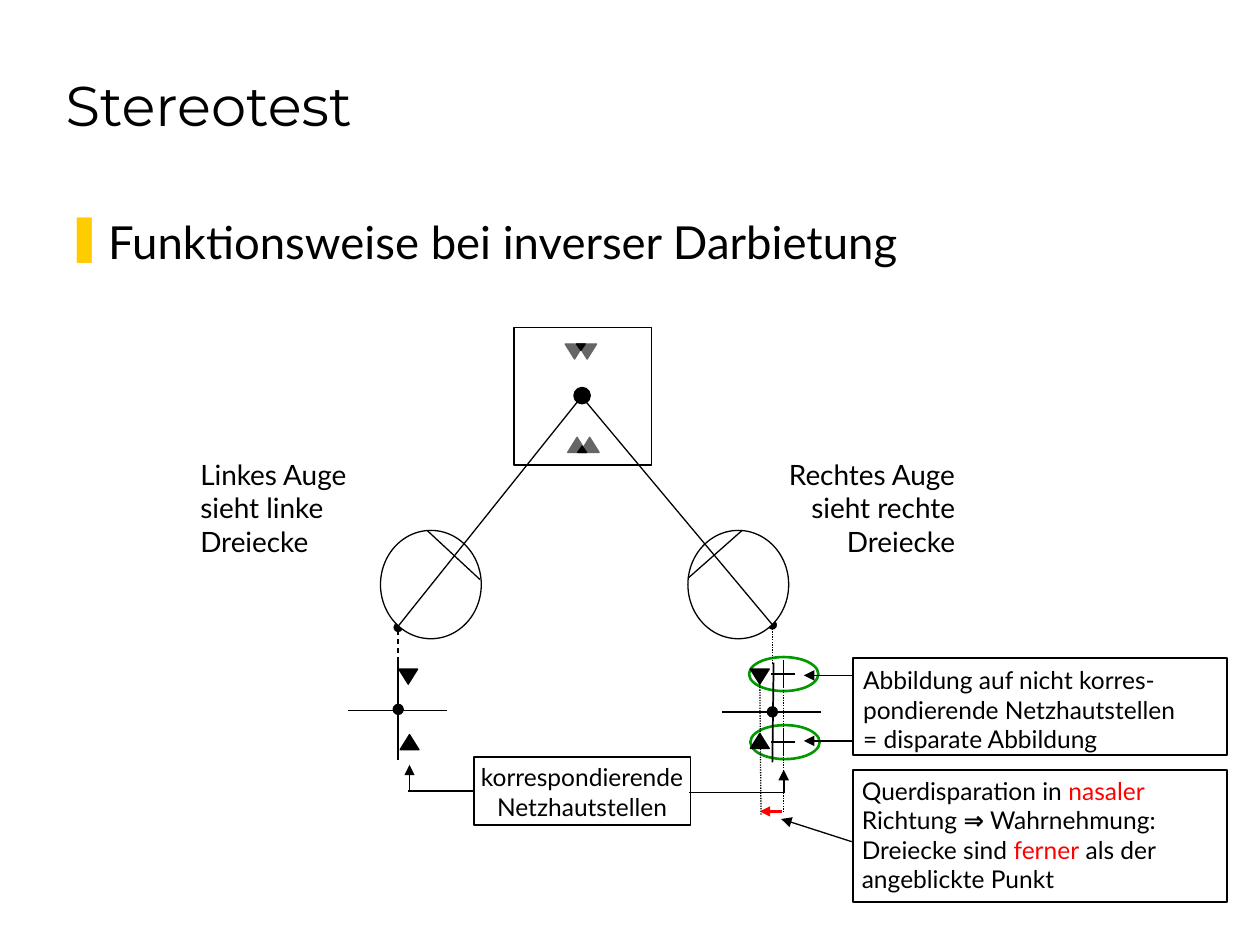
from copy import deepcopy

from lxml.etree import SubElement
from pptx import Presentation
from pptx.dml.color import RGBColor
from pptx.enum.dml import MSO_LINE as Dash
from pptx.enum.shapes import MSO_CONNECTOR, MSO_SHAPE as Shape
from pptx.enum.text import MSO_ANCHOR as Anchor, PP_ALIGN as Align
from pptx.oxml.ns import qn
from pptx.util import Inches, Pt

BLACK, GRAY, WHITE, RED, GREEN, YELLOW = (
    "000000", "666666", "FFFFFF", "FF0000", "009900", "FFCC00")
TITLE = "Stereotest"
HEADING = "Funktionsweise bei inverser Darbietung"

# box, insets (left, top, right), size, alignment, outlined, runs
TEXTS = [
    ((6.77, 5.22, 2.97, 0.77), (0.08, 0.06, 0.06), 14, Align.LEFT, True,
     [("Abbildung auf nicht korres-pondierende Netzhautstellen\n"
       "= disparate Abbildung", {})]),
    ((6.77, 6.11, 2.97, 1.05), (0.07, 0.05, 0.06), 14, Align.LEFT, True,
     [("Querdisparation in ", {}), ("nasaler", {"color": RED}),
      (" Richtung ", {}), ("⇒", {"bold": True}),
      (" Wahrnehmung: Dreiecke sind", {}), (" ferner", {"color": RED}),
      (" als der angeblickte Punkt", {})]),
    ((3.76, 6.01, 1.72, 0.54), (0.04, 0.04, 0.04), 14, Align.CENTER, True,
     [("korrespondierende\nNetzhautstellen", {})]),
    ((1.58, 3.62, 1.33, 0.92), (0.01, 0.01, 0.01), 16, Align.LEFT, False,
     [("Linkes Auge sieht linke Dreiecke", {})]),
    ((6.17, 3.62, 1.42, 0.92), (0.01, 0.01, 0.01), 16, Align.RIGHT, False,
     [("Rechtes Auge sieht rechte Dreiecke", {})]),
]

# centre x, centre y, width, height, fill, line colour, line width
EYES = [(x, 4.64, 0.8, 0.86, WHITE, BLACK, 0.75) for x in (3.42, 5.86)]
FOVEAS = [(x, y, 0.07, 0.07, BLACK, BLACK, 0.25)
          for x, y in ((3.16, 4.98), (6.13, 4.96))]
FIXATION_POINTS = [(x, y, size, size, BLACK, BLACK, 0.75) for x, y, size in
                   ((4.62, 3.14, 0.13), (3.16, 5.63, 0.08), (6.13, 5.65, 0.08))]
DISPARITY_RINGS = [(x, y, 0.55, 0.27, None, GREEN, 1.5)
                   for x, y in ((6.22, 5.35), (6.23, 5.89))]

# centre x, base y, width, signed height (positive points down), colour
TRIANGLES = [
    (4.56, 2.73, 0.15, 0.12, GRAY), (4.66, 2.73, 0.15, 0.12, GRAY),
    (4.61, 2.73, 0.07, 0.05, BLACK),
    (4.58, 3.59, 0.15, -0.12, GRAY), (4.68, 3.59, 0.15, -0.12, GRAY),
    (4.62, 3.59, 0.07, -0.05, BLACK),
    (3.24, 5.31, 0.15, 0.12, BLACK), (3.25, 5.95, 0.15, -0.12, BLACK),
    (6.03, 5.31, 0.15, 0.12, BLACK), (6.03, 5.94, 0.15, -0.12, BLACK),
]

# format, then (from x, from y, to x, to y) for each line
LINES = [
    ({"width": 0.75}, [
        (3.16, 4.97, 4.63, 3.13), (6.14, 4.97, 4.61, 3.14),
        (3.39, 4.21, 3.81, 4.6), (5.89, 4.21, 5.46, 4.59),
        (6.22, 5.24, 6.22, 5.46), (6.31, 5.35, 6.12, 5.35),
        (6.22, 5.79, 6.22, 6), (6.31, 5.89, 6.12, 5.89)]),
    ({"width": 1}, [
        (3.16, 6.03, 3.16, 5.24), (2.76, 5.64, 3.55, 5.64),
        (6.14, 5.26, 6.13, 6.05), (6.52, 5.65, 5.73, 5.65),
        (3.75, 6.28, 3.24, 6.28), (5.47, 6.29, 6.22, 6.29)]),
    ({"width": 0.75, "dash": Dash.DASH}, [(3.16, 5, 3.16, 5.29)]),
    ({"width": 0.75, "dash": Dash.ROUND_DOT}, [
        (6.13, 4.97, 6.13, 5.27), (6.03, 5.37, 6.04, 6.47),
        (6.22, 5.35, 6.22, 6.45)]),
    ({"width": 0.75, "arrow": True}, [
        (6.77, 5.36, 6.38, 5.36), (6.77, 5.88, 6.38, 5.88),
        (6.76, 6.68, 6.2, 6.5)]),
    ({"width": 1, "arrow": True}, [
        (3.25, 6.28, 3.25, 6.07), (6.22, 6.29, 6.22, 6.11)]),
    ({"width": 1.5, "color": RED, "arrow": True}, [(6.21, 6.44, 6.03, 6.44)]),
]


def rgb(value):
    return RGBColor.from_string(value)


def inches(values):
    return [Inches(value) for value in values]


def paint(shape, fill, color, width):
    shape.shadow.inherit = False
    if fill:
        shape.fill.solid()
        shape.fill.fore_color.rgb = rgb(fill)
    else:
        shape.fill.background()
    shape.line.color.rgb = rgb(color)
    shape.line.width = Pt(width)


def add_run(para, text, size, name="Lato", color=BLACK, bold=False):
    """Add text as runs, with a line break of the same size at each newline."""
    for number, part in enumerate(text.split("\n")):
        if number:
            para.add_line_break()
        span = para.add_run()
        span.text = part
        for key, value in {"size": Pt(size), "name": name, "bold": bold}.items():
            setattr(span.font, key, value)
        span.font.color.rgb = rgb(color)
        if number:
            span._r.getprevious().append(deepcopy(span._r.get_or_add_rPr()))


def add_text(slide, place, insets, size, align, outlined, runs):
    if outlined:
        box = slide.shapes.add_shape(Shape.RECTANGLE, *inches(place))
        paint(box, None, BLACK, 1)
    else:
        box = slide.shapes.add_textbox(*inches(place))
    frame = box.text_frame
    left, top, right = inches(insets)
    settings = {"word_wrap": True, "vertical_anchor": Anchor.TOP,
                "margin_left": left, "margin_top": top,
                "margin_right": right, "margin_bottom": 0}
    for key, value in settings.items():
        setattr(frame, key, value)
    para = frame.paragraphs[0]
    para.alignment = align
    for text, style in runs:
        add_run(para, text, size, **style)
    return para


def add_ellipse(slide, x, y, width, height, fill, color, weight):
    place = (x - width / 2, y - height / 2, width, height)
    paint(slide.shapes.add_shape(Shape.OVAL, *inches(place)), fill, color, weight)


def add_triangle(slide, x, base, width, height, color):
    builder = slide.shapes.build_freeform(
        *inches((x - width / 2, base)), scale=1.0)
    builder.add_line_segments(
        [inches((x + width / 2, base)), inches((x, base + height))], close=True)
    paint(builder.convert_to_shape(), color, color, 0.75)


def add_line(slide, ends, width, color=BLACK, dash=None, arrow=False):
    line = slide.shapes.add_connector(MSO_CONNECTOR.STRAIGHT, *inches(ends))
    line.line.color.rgb = rgb(color)
    line.line.width = Pt(width)
    if dash:
        line.line.dash_style = dash
    if arrow:
        SubElement(line.line._get_or_add_ln(), qn("a:tailEnd"), type="triangle")
    SubElement(line._element.spPr, qn("a:effectLst"))


def add_title(slide):
    title = slide.shapes.title
    title.left, title.top, title.width, title.height = inches((0.42, 0.24, 9.16, 0.9))
    title.text_frame.vertical_anchor = Anchor.BOTTOM
    para = title.text_frame.paragraphs[0]
    para.alignment = Align.LEFT
    add_run(para, TITLE, 32, "Montserrat")


def add_heading(slide):
    para = add_text(slide, (0.42, 1.65, 9.17, 0.53), (0.1, 0.05, 0.1), 26,
                    Align.LEFT, False, [(HEADING, {})])
    props = para._p.get_or_add_pPr()
    props.set("marL", str(Inches(0.34)))
    props.set("indent", str(-Inches(0.34)))
    SubElement(SubElement(props, qn("a:buClr")), qn("a:srgbClr"), val=YELLOW)
    SubElement(props, qn("a:buChar"), char="❚")


def main():
    deck = Presentation()
    deck.slide_width, deck.slide_height = inches((10, 7.5))
    slide = deck.slides.add_slide(deck.slide_layouts[5])
    add_title(slide)
    add_heading(slide)
    test_chart = slide.shapes.add_shape(
        Shape.RECTANGLE, *inches((4.08, 2.6, 1.09, 1.09)))
    paint(test_chart, None, BLACK, 1)
    for ellipse in FOVEAS + EYES + FIXATION_POINTS + DISPARITY_RINGS:
        add_ellipse(slide, *ellipse)
    for triangle in TRIANGLES:
        add_triangle(slide, *triangle)
    for style, group in LINES:
        for ends in group:
            add_line(slide, ends, **style)
    for text in TEXTS:
        add_text(slide, *text)
    deck.save("out.pptx")


if __name__ == "__main__":
    main()
